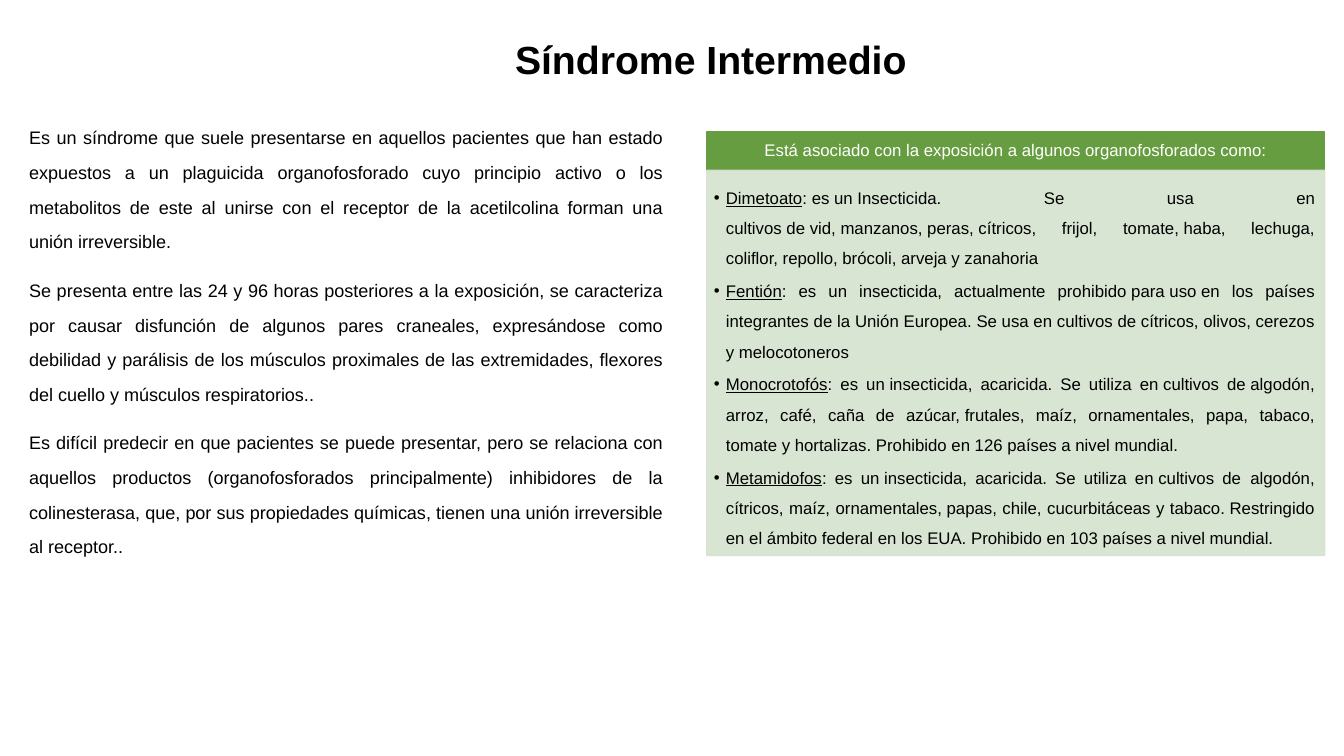
from lxml import etree
from pptx import Presentation
from pptx import util as u
from pptx.dml.color import RGBColor
from pptx.enum import shapes, text
from pptx.oxml.ns import qn

WIDTH, HEIGHT = 13.33, 7.5
NBSP = chr(160)

SYMPTOMS = [
    "Es un síndrome que suele presentarse en aquellos pacientes que han estado expuestos a un plaguicida organofosforado cuyo principio activo o los metabolitos de este al unirse con el receptor de la acetilcolina forman una unión irreversible.",
    "Se presenta entre las 24 y 96 horas posteriores a la exposición, se caracteriza por causar disfunción de algunos pares craneales, expresándose como debilidad y parálisis de los músculos proximales de las extremidades, flexores del cuello y músculos respiratorios.. ",
    "Es difícil predecir en que pacientes se puede presentar, pero se relaciona con aquellos productos (organofosforados principalmente) inhibidores de la colinesterasa, que, por sus propiedades químicas, tienen una unión irreversible al receptor..",
]
EXPOSURE = "Está~asociado~con~la~exposición~a~algunos~organofosforados~como:"
PESTICIDES = [
    ("Dimetoato", ":~es~un~Insecticida. Se usa en cultivos~de~vid,~manzanos,~peras,~cítricos, frijol, tomate,~haba, lechuga, coliflor,~repollo, brócoli, arveja y~zanahoria"),
    ("Fentión", ": es un insecticida, actualmente prohibido~para~uso~en los países integrantes de la Unión Europea. Se~usa en cultivos de~cítricos, olivos, cerezos y~melocotoneros"),
    ("Monocrotofós", ": es un~insecticida, acaricida. Se utiliza en~cultivos de~algodón, arroz, café, caña de azúcar,~frutales, maíz, ornamentales, papa, tabaco, tomate y~hortalizas.~Prohibido en 126 países a nivel~mundial."),
    ("Metamidofos", ": es un~insecticida, acaricida. Se utiliza en~cultivos de~~algodón, cítricos, maíz, ornamentales,~papas, chile, cucurbitáceas y tabaco.~Restringido en el~ámbito federal en los EUA. Prohibido en 103 países a~nivel mundial."),
]


def color(code):
    """Turn a hex string into a colour."""
    return RGBColor.from_string(code)


def write(paragraph, words, size=12, ink="000000", bold=False, underline=False,
          align=text.PP_ALIGN.JUSTIFY, spacing=1.5, before=0, after=0):
    """Add a formatted run, with ~ standing for a non-breaking space."""
    paragraph.alignment = align
    paragraph.line_spacing = spacing
    paragraph.space_before, paragraph.space_after = u.Pt(before), u.Pt(after)
    run = paragraph.add_run()
    run.text = words.replace("~", NBSP)
    run.font.name, run.font.size = "Arial", u.Pt(size)
    run.font.bold, run.font.underline = bold, underline
    run.font.color.rgb = color(ink)


def bullet(paragraph, indent=0.12):
    """Give a paragraph a hanging bullet."""
    properties = paragraph._p.get_or_add_pPr()
    properties.set("marL", str(u.Inches(indent)))
    properties.set("indent", str(-u.Inches(indent)))
    etree.SubElement(properties, qn("a:buFont")).set("typeface", "Arial")
    etree.SubElement(properties, qn("a:buChar")).set("char", "•")


def paragraphs(frame, count):
    """Yield a frame's first paragraph and then new ones."""
    for index in range(count):
        yield frame.add_paragraph() if index else frame.paragraphs[0]


class Deck:
    """Holds the presentation, its style and the current slide."""

    def __init__(self):
        """Open a title-only slide."""
        self.deck = Presentation()
        self.deck.slide_width = u.Inches(WIDTH)
        self.deck.slide_height = u.Inches(HEIGHT)
        self.slide = self.deck.slides.add_slide(self.deck.slide_layouts[5])

    def area(self, left, top, width, height):
        """Convert shares of the slide's size into lengths."""
        return [u.Inches(share * side) for share, side in
                zip((left, top, width, height), (WIDTH, HEIGHT) * 2)]

    def frame(self, shape, anchor=text.MSO_ANCHOR.TOP, insets=(0.1, 0.05, 0.1, 0.05)):
        """Prepare a shape's text frame."""
        frame = shape.text_frame
        frame.word_wrap, frame.auto_size = True, text.MSO_AUTO_SIZE.NONE
        frame.vertical_anchor = anchor
        (frame.margin_left, frame.margin_top,
         frame.margin_right, frame.margin_bottom) = map(u.Inches, insets)
        return frame

    def title(self, words, *area):
        """Place and fill the title."""
        heading = self.slide.shapes.title
        heading.left, heading.top, heading.width, heading.height = self.area(*area)
        frame = self.frame(heading, text.MSO_ANCHOR.MIDDLE)
        write(frame.paragraphs[0], words, 28, bold=True,
              align=text.PP_ALIGN.CENTER, spacing=0.9)

    def prose(self, passages, *area):
        """Add justified running text."""
        frame = self.frame(self.slide.shapes.add_textbox(*self.area(*area)))
        for index, paragraph in enumerate(paragraphs(frame, len(passages))):
            write(paragraph, passages[index], 12.9, spacing=1.6, before=10 if index else 0)

    def panel(self, fill, *area, opacity=100):
        """Add a filled rectangle."""
        panel = self.slide.shapes.add_shape(shapes.MSO_SHAPE.RECTANGLE, *self.area(*area))
        panel.shadow.inherit = False
        panel.fill.solid()
        panel.fill.fore_color.rgb = panel.line.color.rgb = color(fill)
        panel.line.width = u.Pt(1)
        if opacity < 100:
            for tone in panel._element.spPr.iter(qn("a:srgbClr")):
                etree.SubElement(tone, qn("a:alpha")).set("val", str(opacity * 1000))
        return panel

    def banner(self, words, *area):
        """Add the green heading of the list."""
        frame = self.frame(self.panel("669D40", *area), text.MSO_ANCHOR.MIDDLE,
                           (0.09, 0.05, 0.09, 0.05))
        write(frame.paragraphs[0], words, ink="FFFFFF",
              align=text.PP_ALIGN.CENTER, spacing=0.9)

    def catalogue(self, entries, *area):
        """Add a bulleted list of underlined terms and descriptions."""
        frame = self.frame(self.panel("D5E3CF", *area, opacity=90),
                           insets=(0.07, 0.07, 0.09, 0.1))
        for paragraph, (term, description) in zip(paragraphs(frame, len(entries)), entries):
            bullet(paragraph)
            write(paragraph, term, underline=True, after=1.8)
            write(paragraph, description, after=1.8)


def main():
    """Build and save the slide."""
    page = Deck()
    left, width = 7.01 / WIDTH, 6.13 / WIDTH
    top, banner, body = 1.31 / HEIGHT, 0.38 / HEIGHT, 3.82 / HEIGHT
    page.title("Síndrome Intermedio", 1.3 / WIDTH, 0.25 / HEIGHT, 11.5 / WIDTH, 0.73 / HEIGHT)
    page.prose(SYMPTOMS, 0.19 / WIDTH, 1.08 / HEIGHT, 6.48 / WIDTH, 4.66 / HEIGHT)
    page.banner(EXPOSURE, left, top, width, banner)
    page.catalogue(PESTICIDES, left, top + banner, width, body)
    page.deck.save("out.pptx")


if __name__ == "__main__":
    main()
